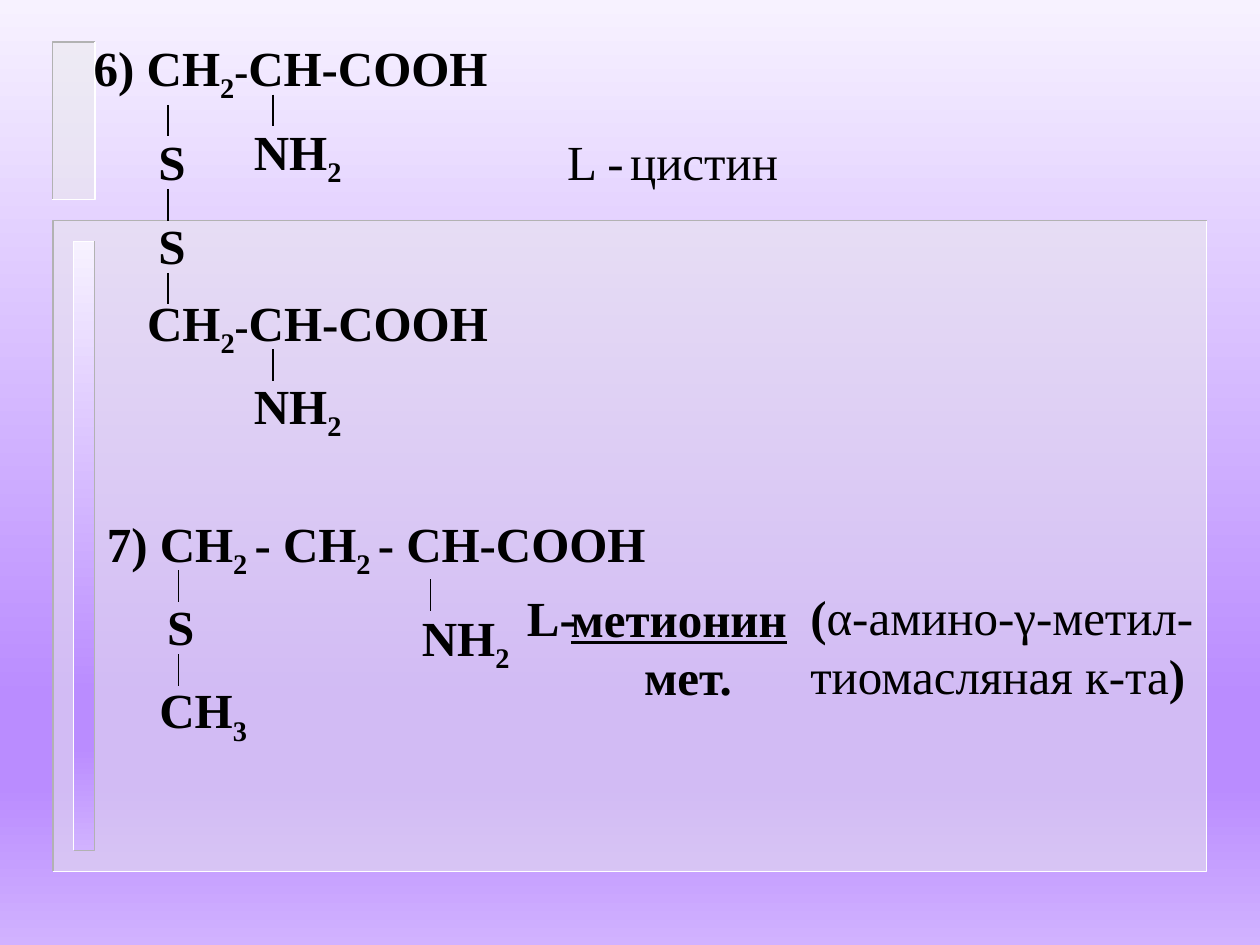
from lxml import etree
from pptx import Presentation
from pptx.dml.color import RGBColor
from pptx.enum.shapes import MSO_CONNECTOR, MSO_SHAPE
from pptx.enum.text import MSO_AUTO_SIZE
from pptx.oxml.ns import qn
from pptx.util import Pt

RECTANGLE = MSO_SHAPE.RECTANGLE
STRAIGHT = MSO_CONNECTOR.STRAIGHT
FIT_SHAPE = MSO_AUTO_SIZE.SHAPE_TO_FIT_TEXT

COLORS = {"text": "000000", "panel": "EAEAEA", "dark edge": "B2B2B2", "light edge": "FFFFFF"}
GRADIENT = [(0, "F7F2FF"), (74, "BA8CFF"), (83, "BA8CFF"), (100, "D1B2FF")]
FONT = "Times New Roman"
FONT_SIZE = 28
BOND_LENGTH = 18


def set_gradient(fill, element):
    fill.gradient()
    fill.gradient_angle = 270
    stops = next(element.iter(qn("a:gsLst")))
    for stop in list(stops):
        stops.remove(stop)
    for position, color in GRADIENT:
        stop = etree.SubElement(stops, qn("a:gs"), pos=str(position * 1000))
        etree.SubElement(stop, qn("a:srgbClr"), val=color)


def add_text(left, top, width, *lines, bold=True, indents=(0, 0)):
    box = slide.shapes.add_textbox(Pt(left), Pt(top), Pt(width), Pt(7.2 + 33.6 * len(lines)))
    frame = box.text_frame
    frame.word_wrap = False
    frame.auto_size = FIT_SHAPE
    for index, runs in enumerate(lines):
        paragraph = frame.add_paragraph() if index else frame.paragraphs[0]
        paragraph.font.name = FONT
        paragraph.font.size = Pt(FONT_SIZE)
        paragraph.font.bold = bold
        paragraph.font.color.rgb = RGBColor.from_string(COLORS["text"])
        if indents[index]:
            paragraph._p.get_or_add_pPr().set("marL", str(Pt(indents[index])))
        for text, style in runs:
            run = paragraph.add_run()
            run.text = text
            if style == "sub":
                run.font._element.set("baseline", "-25000")
            elif style == "small":
                run.font.size = Pt(24)
            elif style == "underline":
                run.font.underline = True
            elif style == "bold":
                run.font.bold = True


presentation = Presentation()
presentation.slide_width = Pt(720)
presentation.slide_height = Pt(540)
slide = presentation.slides.add_slide(presentation.slide_layouts[6])
set_gradient(slide.background.fill, slide.element)

panels = [
    (30.5, 126, 659, 372, "panel", "dark edge", "light edge"),
    (42, 138, 12, 348, "gradient", "light edge", "dark edge"),
    (30, 24, 24.2, 90, "panel", "dark edge", "light edge"),
]
for left, top, width, height, kind, upper_edge, lower_edge in panels:
    panel = slide.shapes.add_shape(RECTANGLE, Pt(left), Pt(top), Pt(width), Pt(height))
    panel.shadow.inherit = False
    panel.line.fill.background()
    if kind == "gradient":
        set_gradient(panel.fill, panel.element)
    else:
        panel.fill.solid()
        panel.fill.fore_color.rgb = RGBColor.from_string(COLORS[kind])
        color = next(panel.element.spPr.iter(qn("a:srgbClr")))
        etree.SubElement(color, qn("a:alpha"), val="50000")
    right, bottom = left + width, top + height
    for corner, color in [((left, top), upper_edge), ((right, bottom), lower_edge)]:
        builder = slide.shapes.build_freeform(Pt(right), Pt(top))
        builder.add_line_segments(
            [(Pt(x), Pt(y)) for x, y in (corner, (left, bottom))], close=False
        )
        edge = builder.convert_to_shape()
        edge.shadow.inherit = False
        edge.fill.background()
        edge.line.color.rgb = RGBColor.from_string(COLORS[color])
        edge.line.width = Pt(1)

bonds = [
    (96, 60), (96, 108), (96, 156), (156, 54), (156, 199.5),
    (102, 326), (102, 374), (246, 331),
]
for x, top in bonds:
    bond = slide.shapes.add_connector(STRAIGHT, Pt(x), Pt(top), Pt(x), Pt(top + BOND_LENGTH))
    bond.line.color.rgb = RGBColor.from_string(COLORS["text"])
    bond.line.width = Pt(0.75)
    etree.SubElement(bond.element.spPr, qn("a:effectLst"))

for left, top in [(83.5, 71.5), (83.5, 119.5), (88.5, 337.5)]:
    add_text(left, top, 30, [("S", "")])
for left, top in [(138, 66), (138, 211), (234, 343.5)]:
    add_text(left, top, 66, [("NН", ""), ("2", "sub")])
for left, top, width, start in [(46.5, 18, 241, "6) СН"), (77, 163.5, 211, "СН")]:
    add_text(left, top, width, [(start, ""), ("2", "sub"), ("-", "small"), ("СН-СООН", "")])

add_text(317, 71.5, 48, [("L -", "")], bold=False)
add_text(353, 71.5, 99.5, [("цистин", "")], bold=False)
add_text(54, 290, 327, [
    ("7) СН", ""), ("2 ", "sub"), ("- СН", ""), ("2 ", "sub"), ("- СН-СООН", ""),
])
add_text(84, 385, 66, [("СН", ""), ("3", "sub")])
add_text(294, 332, 42.5, [("L-", "")])
add_text(319, 332.5, 138, [("метионин", "underline")], [("мет.", "")], indents=(0, 42))
add_text(
    456, 331.5, 236,
    [("(", "bold"), ("α-амино-γ-метил-", "")],
    [("тиомасляная к-та", ""), (")", "bold")],
    bold=False,
)

presentation.save("out.pptx")
